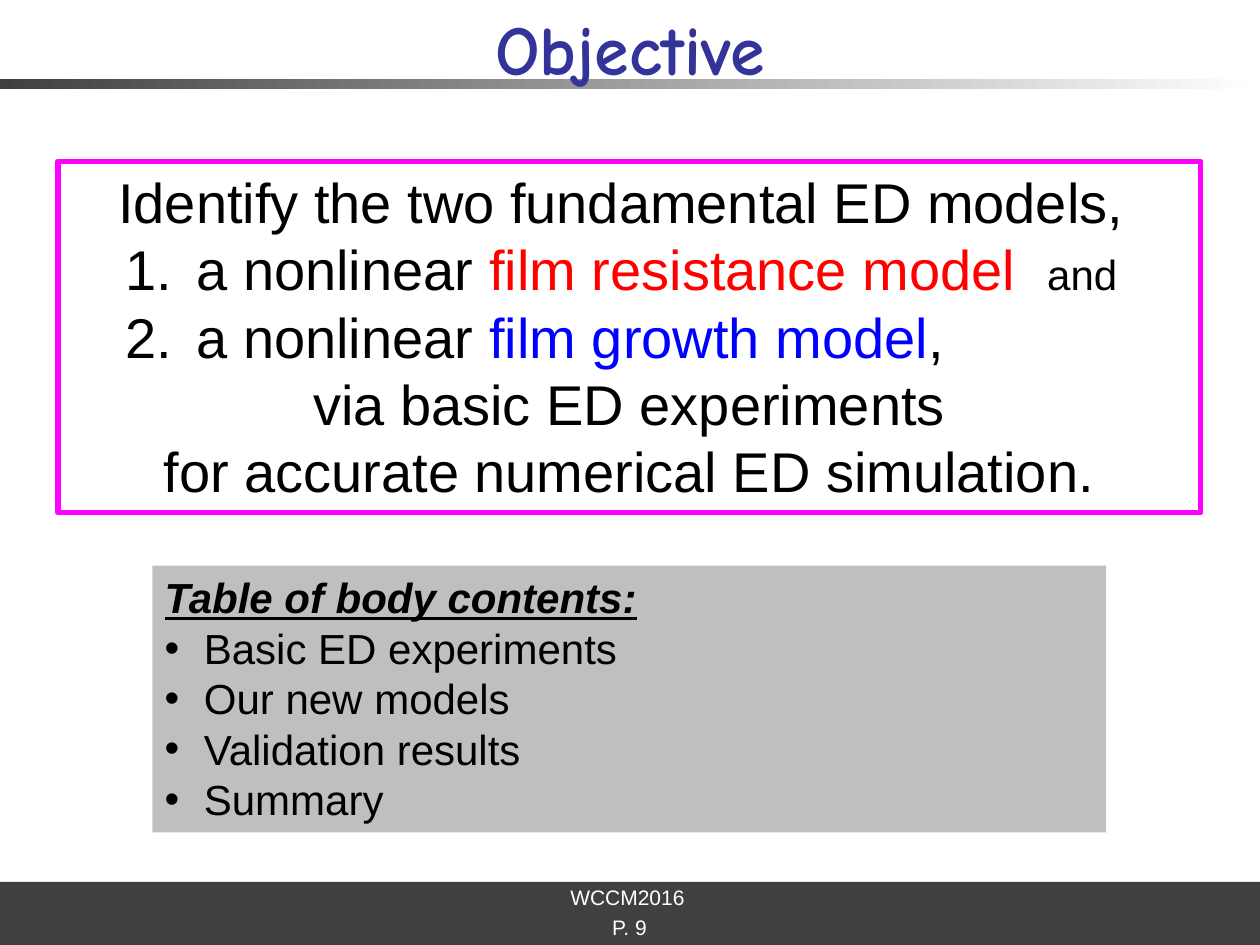
from dataclasses import dataclass

import pptx
import pptx.dml.color
import pptx.enum.shapes
import pptx.enum.text
import pptx.oxml
import pptx.oxml.ns
import pptx.util

Cm = pptx.util.Cm
Align = pptx.enum.text.PP_ALIGN
Anchor = pptx.enum.text.MSO_ANCHOR
BLACK, WHITE, DARK = "000000", "FFFFFF", "404040"
NUMBER = '<a:buAutoNum {ns} type="arabicPeriod"/>'
BULLET = '<a:buChar {ns} char="•"/>'
NO_BULLET = "<a:buNone {ns}/>"


@dataclass
class Area:
    left: float
    top: float
    width: float
    height: float

    def lengths(self) -> list:
        return [Cm(n) for n in (self.left, self.top, self.width, self.height)]


@dataclass
class Span:
    text: str
    size: float = 24
    color: str = BLACK
    font: str = "Arial"
    bold: bool = False
    italic: bool = False
    underline: bool = False


@dataclass
class Line:
    spans: list
    align: object = Align.LEFT
    mark: str = NO_BULLET
    margin: float = 0
    hanging: float = 0
    level: int = 0


def rgb(value: str):
    return pptx.dml.color.RGBColor.from_string(value)


def xml(text: str):
    return pptx.oxml.parse_xml(text.replace("{ns}", pptx.oxml.ns.nsdecls("a")))


def write(box, lines: list, inset: tuple = (0, 0), anchor=Anchor.TOP, wrap: bool = True) -> None:
    frame = box.text_frame
    frame.auto_size = pptx.enum.text.MSO_AUTO_SIZE.NONE
    frame.word_wrap = wrap
    frame.vertical_anchor = anchor
    frame.margin_left = frame.margin_right = Cm(inset[0])
    frame.margin_top = frame.margin_bottom = Cm(inset[1])
    for index, line in enumerate(lines):
        para = frame.add_paragraph() if index else frame.paragraphs[0]
        para.level = line.level
        para.alignment = line.align
        para.space_before = pptx.util.Pt(0)
        properties = para._p.get_or_add_pPr()
        properties.set("marL", str(Cm(line.margin)))
        properties.set("indent", str(-Cm(line.hanging)))
        properties.append(xml(line.mark))
        for span in line.spans:
            run = para.add_run()
            run.text = span.text
            font = run.font
            font.name, font.size = span.font, pptx.util.Pt(span.size)
            font.bold, font.italic, font.underline = span.bold, span.italic, span.underline
            font.color.rgb = rgb(span.color)


def place(box, area: Area) -> None:
    box.left, box.top, box.width, box.height = area.lengths()


def add_rectangle(page, area: Area):
    box = page.shapes.add_shape(pptx.enum.shapes.MSO_SHAPE.RECTANGLE, *area.lengths())
    box.shadow.inherit = False
    box.fill.background()
    box.line.fill.background()
    return box


def add_label(page, area: Area, text: str, anchor) -> None:
    box = page.shapes.add_textbox(*area.lengths())
    write(box, [Line([Span(text, 12, WHITE)], Align.CENTER)], anchor=anchor, wrap=False)


def main() -> None:
    deck = pptx.Presentation()
    deck.slide_width, deck.slide_height = Cm(25.4), Cm(19.05)
    page = deck.slides.add_slide(deck.slide_layouts[1])

    # Footer band and fading rule under the title
    band = add_rectangle(page, Area(0, 17.78, 25.4, 1.27))
    band.fill.solid()
    band.fill.fore_color.rgb = rgb(DARK)
    rule = add_rectangle(page, Area(0, 1.6, 25.4, 0.2))
    rule.fill.gradient()
    rule.fill.gradient_angle = 0
    for stop, color in zip(rule.fill.gradient_stops, (DARK, WHITE)):
        stop.color.rgb = rgb(color)
    add_label(page, Area(11.5, 17.83, 2.3, 0.5), "WCCM2016", Anchor.TOP)
    add_label(page, Area(11.23, 18.42, 2.92, 0.55), "P. 9", Anchor.MIDDLE)

    # Title with a text shadow, in front of the rule
    title = page.shapes.title
    place(title, Area(0, 0.1, 25.4, 1.73))
    heading = Span("Objective", 40, "333399", "Comic Neue", bold=True)
    write(title, [Line([heading], Align.CENTER)], anchor=Anchor.MIDDLE)
    fill = title.text_frame.paragraphs[0].runs[0].font._element.find(pptx.oxml.ns.qn("a:solidFill"))
    fill.addnext(xml('<a:effectLst {ns}><a:outerShdw dist="35921" dir="2700000">'
                     '<a:srgbClr val="BBE0E3"/></a:outerShdw></a:effectLst>'))
    page.shapes._spTree.append(title.element)

    # Objective frame
    frame = add_rectangle(page, Area(1.17, 3.25, 23.04, 7.09))
    frame.line.color.rgb = rgb("FF00FF")
    frame.line.width = pptx.util.Pt(3)
    models = [
        [Span("film resistance model  ", 32, "FF0000"), Span("and")],
        [Span("film growth model", 32, "0000FF"), Span(",", 32)],
    ]
    numbered = [Line([Span("a nonlinear ", 32), *model], mark=NUMBER, margin=2.54,
                     hanging=1.43, level=1) for model in models]
    opening, *closing = [Line([Span(text, 32)], Align.CENTER) for text in (
        "Identify the two fundamental ED models, ",
        "via basic ED experiments",
        "for accurate numerical ED simulation.",
    )]
    write(frame, [opening, *numbered, *closing], inset=(0.25, 0.13), anchor=Anchor.TOP)

    # Table of contents
    contents = page.placeholders[1]
    place(contents, Area(3.07, 11.4, 19.23, 5.38))
    contents.fill.solid()
    contents.fill.fore_color.rgb = rgb("BFBFBF")
    topics = ("Basic ED experiments", "Our new models", "Validation results", "Summary")
    write(contents, [
        Line([Span("Table of body contents:", bold=True, italic=True, underline=True)]),
        *[Line([Span(topic)], mark=BULLET, margin=0.79, hanging=0.79) for topic in topics],
    ], inset=(0.25, 0.13))

    deck.save("out.pptx")


if __name__ == "__main__":
    main()
